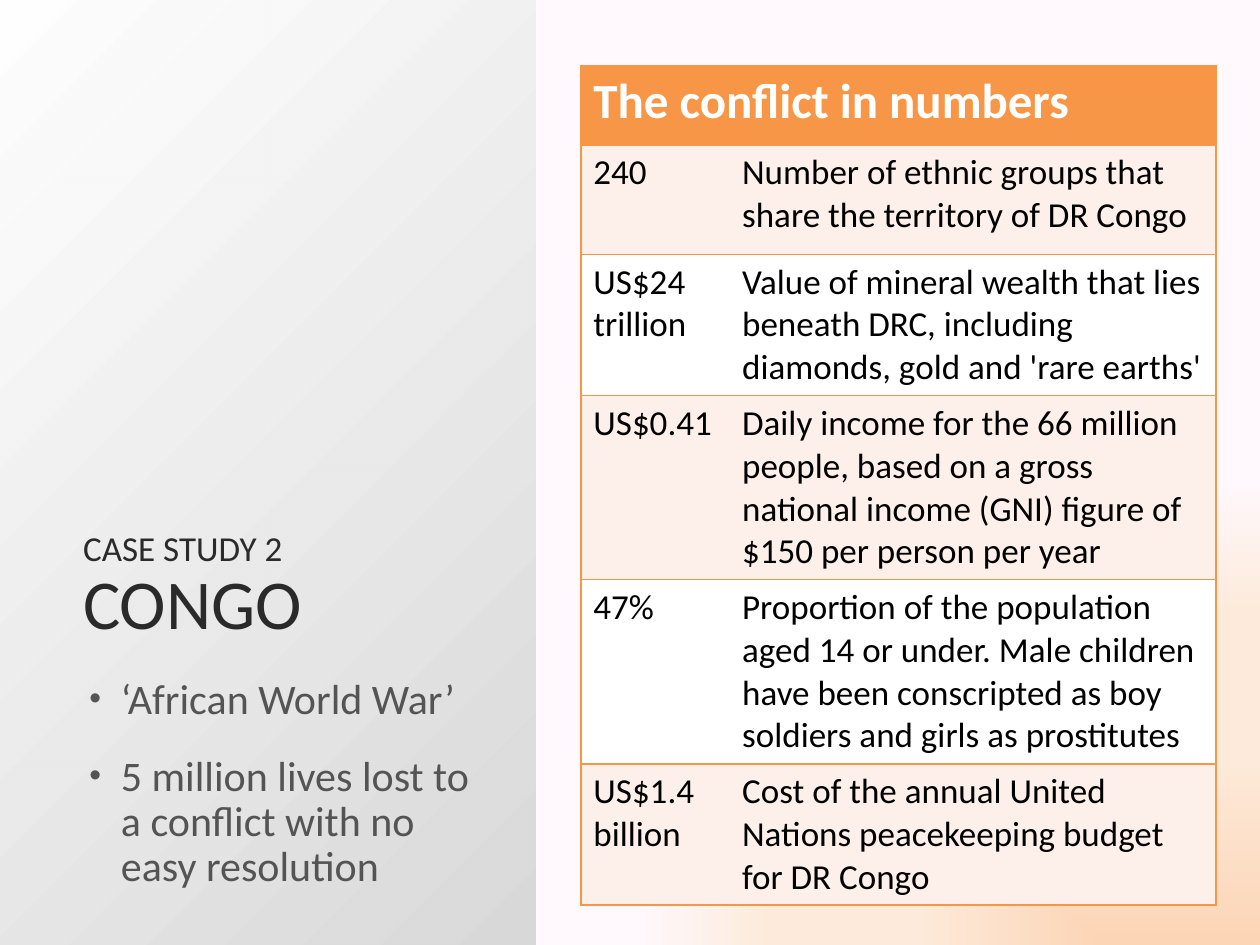
"""Build the Congo case study slide."""
from dataclasses import dataclass

from lxml import etree
from pptx import Presentation
from pptx.dml.color import RGBColor
from pptx.enum.shapes import MSO_SHAPE
from pptx.enum.text import MSO_ANCHOR, MSO_AUTO_SIZE, PP_ALIGN
from pptx.oxml.ns import qn
from pptx.util import Pt

RECT = MSO_SHAPE.RECTANGLE
TOP, BOTTOM = MSO_ANCHOR.TOP, MSO_ANCHOR.BOTTOM
LEFT = PP_ALIGN.LEFT
NO_FIT = MSO_AUTO_SIZE.NONE


@dataclass(frozen=True)
class Theme:
    font: str = "Calibri"
    title: str = "2A2A2A"
    body: str = "545454"
    text: str = "000000"
    white: str = "FFFFFF"
    accent: str = "F79646"
    band: str = "FDEFE9"
    title_size: int = 40
    header_size: int = 28
    body_size: int = 24
    small_size: int = 20
    backdrop: tuple = ((0, "FCD5B5", 100), (40, "FDEADA", 100),
                       (70, "FDEADA", 100), (100, "FFF9FE", 83))
    panel: tuple = ((0, "D9D9D9", 100), (100, "FFFFFF", 89))


def add_text(p, text, size, color, font, bold=False):
    r = p.add_run()
    r.text = text
    r.font.name, r.font.size, r.font.bold = font, Pt(size), bold
    r.font.color.rgb = RGBColor.from_string(color)


def add_element(parent, tag, **attrs):
    el = etree.SubElement(parent, qn(tag))
    for name, value in attrs.items():
        el.set(name, str(value))
    return el


def set_gradient(parent, stops, shape):
    solid = parent.find(qn("a:solidFill"))
    grad = etree.Element(qn("a:gradFill"), rotWithShape="1")
    stop_list = add_element(grad, "a:gsLst")
    for pos, color, alpha in stops:
        gs = add_element(stop_list, "a:gs", pos=pos * 1000)
        clr = add_element(gs, "a:srgbClr", val=color)
        if alpha < 100:
            add_element(clr, "a:alpha", val=alpha * 1000)
    path_el = add_element(grad, "a:path", path=shape)
    add_element(path_el, "a:fillToRect", l=100000, t=100000)
    parent.replace(solid, grad)


def set_borders(cell, color, hidden):
    tc_pr = cell._tc.get_or_add_tcPr()
    for i, side in enumerate(("lnL", "lnR", "lnT", "lnB")):
        ln = etree.Element(qn(f"a:{side}"), w=str(Pt(1)))
        if side == hidden:
            add_element(ln, "a:noFill")
        else:
            add_element(add_element(ln, "a:solidFill"), "a:srgbClr", val=color)
        tc_pr.insert(i, ln)


class SlideBuilder:
    def __init__(self, slide, theme):
        self.s, self.theme = slide, theme

    def background(self):
        self.s.background.fill.solid()
        bg = self.s._element.find(".//" + qn("p:bgPr"))
        set_gradient(bg, self.theme.backdrop, "rect")

    def panel(self, *box):
        sp = self.s.shapes.add_shape(RECT, *map(Pt, box))
        sp.shadow.inherit = False
        sp.line.fill.background()
        sp.fill.solid()
        set_gradient(sp._element.spPr, self.theme.panel, "circle")
        self.s.shapes._spTree.insert(2, sp._element)

    def place(self, sp, box, anchor):
        sp.left, sp.top, sp.width, sp.height = map(Pt, box)
        tf = sp.text_frame
        tf.word_wrap, tf.auto_size, tf.vertical_anchor = True, NO_FIT, anchor
        return tf

    def title(self, kicker, text, *box):
        t = self.theme
        p = self.place(self.s.shapes.title, box, BOTTOM).paragraphs[0]
        p.alignment, p.line_spacing = LEFT, 0.9
        add_text(p, kicker, t.small_size, t.title, t.font)
        p.add_line_break()
        add_text(p, text, t.title_size, t.title, t.font)

    def bullets(self, items, *box):
        t = self.theme
        tf = self.place(self.s.placeholders[1], box, TOP)
        for i, item in enumerate(items):
            p = tf.add_paragraph() if i else tf.paragraphs[0]
            p.alignment, p.line_spacing, p.space_before = LEFT, 0.9, Pt(18)
            p_pr = p._p.get_or_add_pPr()
            p_pr.set("marL", str(Pt(21.6)))
            p_pr.set("indent", str(Pt(-18)))
            add_element(add_element(p_pr, "a:buClr"), "a:srgbClr", val=t.body)
            add_element(p_pr, "a:buSzPct", val=80000)
            add_element(p_pr, "a:buFont", typeface="Arial")
            add_element(p_pr, "a:buChar", char="•")
            add_text(p, item, t.body_size, t.body, t.font)

    def cell(self, cell, text, fill, size, color, bold=False, hidden=None):
        cell.fill.solid()
        cell.fill.fore_color.rgb = RGBColor.from_string(fill)
        set_borders(cell, self.theme.accent, hidden)
        if text:
            add_text(cell.text_frame.paragraphs[0], text, size, color,
                     self.theme.font, bold)

    def table(self, header, rows, left, top, widths, heights):
        t = self.theme
        box = map(Pt, (left, top, sum(widths), sum(heights)))
        tbl = self.s.shapes.add_table(len(heights), len(widths), *box).table
        for col, width in zip(tbl.columns, widths):
            col.width = Pt(width)
        for row, height in zip(tbl.rows, heights):
            row.height = Pt(height)
        tbl.cell(0, 0).merge(tbl.cell(0, 1))
        for j, text in enumerate((header, "")):
            self.cell(tbl.cell(0, j), text, t.accent, t.header_size, t.white, True)
        for i, row in enumerate(rows, 1):
            fill = t.band if i % 2 else t.white
            for j, (text, hidden) in enumerate(zip(row, ("lnR", "lnL"))):
                self.cell(tbl.cell(i, j), text, fill, t.small_size, t.text,
                          hidden=hidden)


def main():
    prs = Presentation()
    prs.slide_width, prs.slide_height = Pt(720), Pt(540)
    b = SlideBuilder(prs.slides.add_slide(prs.slide_layouts[1]), Theme())
    b.background()
    b.panel(0, 0, 306, 540)
    b.title("CASE STUDY 2", "CONGO", 40.3, 54, 229.7, 318.2)
    b.bullets(("‘African World War’",
               "5 million lives lost to a conflict with no easy resolution"),
              40.3, 383.8, 245.5, 135.4)
    facts = (
        ("240", "Number of ethnic groups that share the territory of DR Congo"),
        ("US$24 trillion", "Value of mineral wealth that lies beneath DRC, "
         "including diamonds, gold and 'rare earths'"),
        ("US$0.41", "Daily income for the 66 million people, based on a gross "
         "national income (GNI) figure of $150 per person per year"),
        ("47%", "Proportion of the population aged 14 or under. Male children "
         "have been conscripted as boy soldiers and girls as prostitutes"),
        ("US$1.4 billion", "Cost of the annual United Nations peacekeeping "
         "budget for DR Congo"),
    )
    b.table("The conflict in numbers", facts, 331.9, 37.4, (85, 277.9),
            (45.4, 62.6, 79.9, 104.4, 104.4, 79.9))
    prs.save("out.pptx")


if __name__ == "__main__":
    main()
